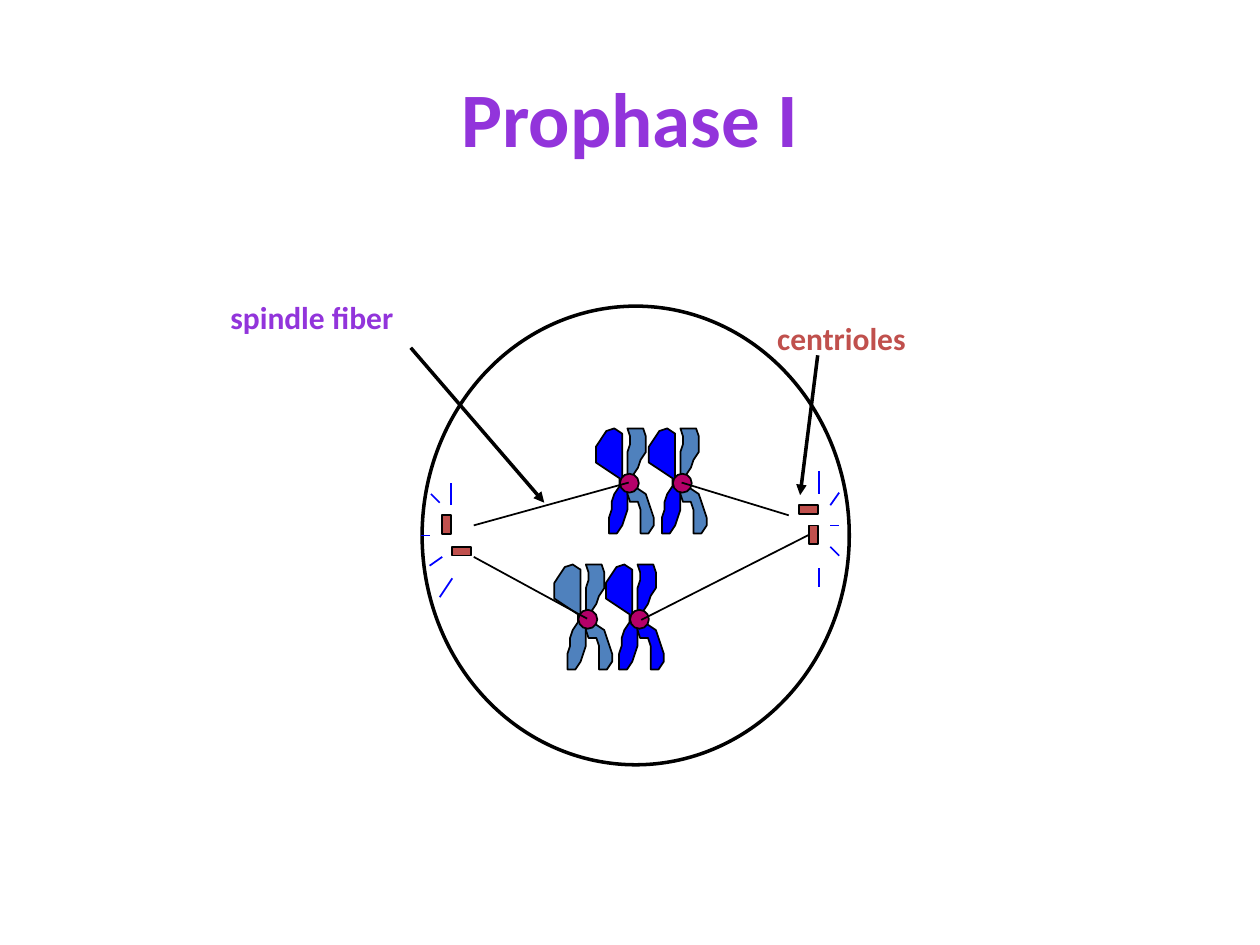
from lxml import etree
from pptx import Presentation
from pptx.dml.color import RGBColor
from pptx.enum.shapes import MSO_CONNECTOR, MSO_SHAPE
from pptx.enum.text import MSO_ANCHOR, PP_ALIGN
from pptx.oxml.ns import qn
from pptx.util import Inches, Pt

STRAIGHT = MSO_CONNECTOR.STRAIGHT
OVAL, RECTANGLE = MSO_SHAPE.OVAL, MSO_SHAPE.RECTANGLE
MIDDLE, CENTER, LEFT = MSO_ANCHOR.MIDDLE, PP_ALIGN.CENTER, PP_ALIGN.LEFT

FONT = "Calibri"
PURPLE, RED, BLUE, STEEL = "9234DB", "C0504D", "0000FF", "4F81BD"
BLACK, WHITE, MAGENTA = "000000", "FFFFFF", "B50069"

TITLE = "Prophase I"
LABELS = [("centrioles", 6.07, 2.48, 1.77, RED), ("spindle fiber", 1.73, 2.32, 2.18, PURPLE)]
CELL = (3.35, 2.43, 3.39, 3.64)
CENTRIOLES = [
    (3.51, 4.09, 0.07, 0.15),
    (6.34, 4.01, 0.15, 0.07),
    (3.59, 4.34, 0.15, 0.07),
    (6.42, 4.17, 0.07, 0.15),
]
ASTERS = [
    (3.59, 4.59, 3.49, 4.74), (3.51, 4.42, 3.41, 4.49), (3.34, 4.25, 3.41, 4.25),
    (3.42, 3.92, 3.49, 3.99), (3.58, 4.01, 3.58, 3.83),
    (6.5, 3.92, 6.5, 3.74), (6.59, 4.01, 6.66, 3.91), (6.59, 4.17, 6.66, 4.17),
    (6.59, 4.34, 6.66, 4.41), (6.5, 4.51, 6.5, 4.66),
]
FIBERS = [
    (3.76, 4.17, 4.99, 3.83),
    (6.26, 4.09, 5.41, 3.83),
    (3.76, 4.42, 4.66, 4.91),
    (5.09, 4.92, 6.41, 4.24),
]
POINTERS = [(3.26, 2.76, 4.32, 3.99), (6.49, 2.82, 6.35, 3.93)]

GRID = Inches(1) / 48
CENTROMERE = (0.19, 0.36, 0.15, 0.15)
LEFT_CHROMATID = [
    (13, 21), (10, 20), (10, 2), (7, 0), (4, 1), (2, 4), (0, 7), (0, 13), (9, 19),
    (9, 22), (7, 25), (6, 28), (6, 31), (5, 34), (5, 40), (8, 40), (10, 37),
    (11, 34), (12, 31), (12, 22),
]
RIGHT_CHROMATID = [
    (13, 21), (12, 18), (12, 9), (13, 6), (13, 3), (12, 0), (18, 0), (19, 3),
    (19, 9), (17, 12), (16, 15), (14, 18), (13, 21), (16, 23), (19, 25), (20, 28),
    (22, 34), (22, 37), (20, 40), (17, 40), (17, 31), (16, 28), (13, 28), (12, 25),
    (12, 22),
]
CHROMOSOMES = [
    (4.40, 4.48, STEEL, STEEL),
    (5.15, 3.40, BLUE, STEEL),
    (4.73, 3.40, BLUE, STEEL),
    (4.81, 4.48, BLUE, BLUE),
]


def color(value):
    return RGBColor.from_string(value)


def paint(shape, fill, width=1):
    shape.shadow.inherit = False
    shape.fill.solid()
    shape.fill.fore_color.rgb = color(fill)
    shape.line.color.rgb = color(BLACK)
    shape.line.width = Pt(width)


def add_preset(page, kind, place, fill, width=1):
    shape = page.shapes.add_shape(kind, *map(Inches, place))
    paint(shape, fill, width)
    return shape


def add_line(page, ends, line_color, width=1, arrow=False):
    line = page.shapes.add_connector(STRAIGHT, *map(Inches, ends))
    line.line.color.rgb = color(line_color)
    line.line.width = Pt(width)
    if arrow:
        etree.SubElement(line.line._get_or_add_ln(), qn("a:tailEnd"), type="triangle")
    etree.SubElement(line._element.spPr, qn("a:effectLst"))
    return line


def add_chromosome(page, left, top, left_fill, right_fill):
    for outline, fill in ((LEFT_CHROMATID, left_fill), (RIGHT_CHROMATID, right_fill)):
        builder = page.shapes.build_freeform(*outline[0], scale=GRID)
        builder.add_line_segments(outline[1:], close=True)
        paint(builder.convert_to_shape(Inches(left), Inches(top)), fill)
    x, y, width, height = CENTROMERE
    add_preset(page, OVAL, (left + x, top + y, width, height), MAGENTA)


def write(frame, text, size, text_color, align):
    frame.word_wrap = True
    para = frame.paragraphs[0]
    para.alignment = align
    span = para.add_run()
    span.text = text
    span.font.name = FONT
    span.font.size = Pt(size)
    span.font.bold = True
    span.font.color.rgb = color(text_color)


def main():
    """Build the Prophase I slide and save it."""
    deck = Presentation()
    deck.slide_width, deck.slide_height = Inches(10), Inches(7.5)
    page = deck.slides.add_slide(deck.slide_layouts[5])

    title = page.shapes.title
    title.left, title.top, title.width, title.height = map(Inches, (0.5, 0.3, 9, 1.25))
    title.text_frame.vertical_anchor = MIDDLE
    write(title.text_frame, TITLE, 44, PURPLE, CENTER)

    add_preset(page, OVAL, CELL, WHITE, 2)
    centrioles = [add_preset(page, RECTANGLE, place, RED) for place in CENTRIOLES]
    for text, left, top, width, text_color in LABELS:
        box = page.shapes.add_textbox(*map(Inches, (left, top, width, 0.5)))
        write(box.text_frame, text, 18, text_color, LEFT)
    for ends in ASTERS:
        add_line(page, ends, BLUE)
    for chromosome in CHROMOSOMES:
        add_chromosome(page, *chromosome)
    fibers = [add_line(page, ends, BLACK) for ends in FIBERS]
    fibers[-1].end_connect(centrioles[-1], 1)
    for ends in POINTERS:
        add_line(page, ends, BLACK, 2, arrow=True)

    deck.save("out.pptx")


if __name__ == "__main__":
    main()
